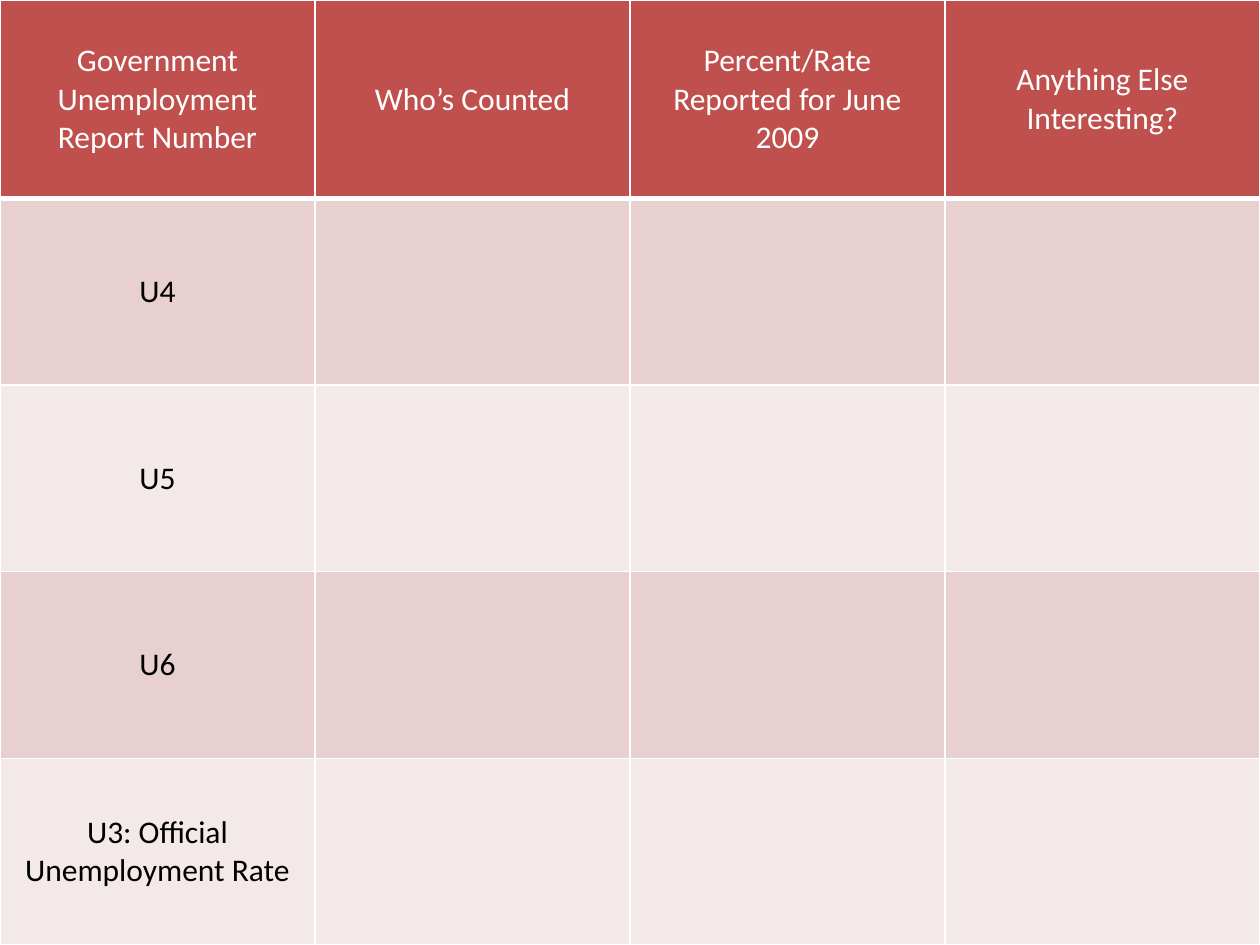
"""Build a slide with a blank worksheet table on unemployment measures."""
from lxml import etree
from pptx import Presentation
from pptx import util as u
from pptx.dml.color import RGBColor
from pptx.enum import text
from pptx.oxml.ns import qn

HEADS = ["Government Unemployment Report Number", "Who’s Counted",
         "Percent/Rate Reported for June 2009", "Anything Else Interesting?"]
RATES = ["U4", "U5", "U6", "U3: Official Unemployment Rate"]


def tint(code):
    return RGBColor.from_string(code)


class Sheet:
    font, size = "Calibri", 18
    head, bands = "C0504D", ("E8D0D0", "F4E9E9")
    light, dark = "FFFFFF", "000000"

    def __init__(self, deck):
        self.wide, self.high = deck.slide_width, deck.slide_height
        self.slide = deck.slides.add_slide(deck.slide_layouts[6])

    def edge(self, cell, side, width):
        line = etree.SubElement(cell._tc.get_or_add_tcPr(), qn(f"a:ln{side}"),
                                w=str(u.Pt(width)))
        fill = etree.SubElement(line, qn("a:solidFill"))
        etree.SubElement(fill, qn("a:srgbClr"), val=self.light)

    def cell(self, cell, words, fill, ink, base):
        for side in "LRTB":
            self.edge(cell, side, base if side == "B" else 1)
        cell.fill.solid()
        cell.fill.fore_color.rgb = tint(fill)
        cell.vertical_anchor = text.MSO_ANCHOR.MIDDLE
        cell.text_frame.text = words
        para = cell.text_frame.paragraphs[0]
        para.alignment = text.PP_ALIGN.CENTER
        for run in para.runs:
            run.font.name, run.font.size = self.font, u.Pt(self.size)
            run.font.bold = False
            run.font.color.rgb = tint(ink)

    def table(self, rows, top):
        grid = self.slide.shapes.add_table(
            len(rows), len(rows[0]), 0, 0, self.wide, self.high).table
        rest = (1 - top) / (len(rows) - 1)
        for i, row in enumerate(rows):
            grid.rows[i].height = int(self.high * (rest if i else top))
            fill = self.bands[(i - 1) % 2] if i else self.head
            ink, base = (self.dark, 1) if i else (self.light, 3)
            for j, words in enumerate(row):
                self.cell(grid.cell(i, j), words, fill, ink, base)


def main():
    deck = Presentation()
    deck.slide_width, deck.slide_height = u.Inches(10), u.Inches(7.5)
    blank = [""] * (len(HEADS) - 1)
    Sheet(deck).table([HEADS] + [[rate] + blank for rate in RATES], top=0.21)
    deck.save("out.pptx")


if __name__ == "__main__":
    main()
